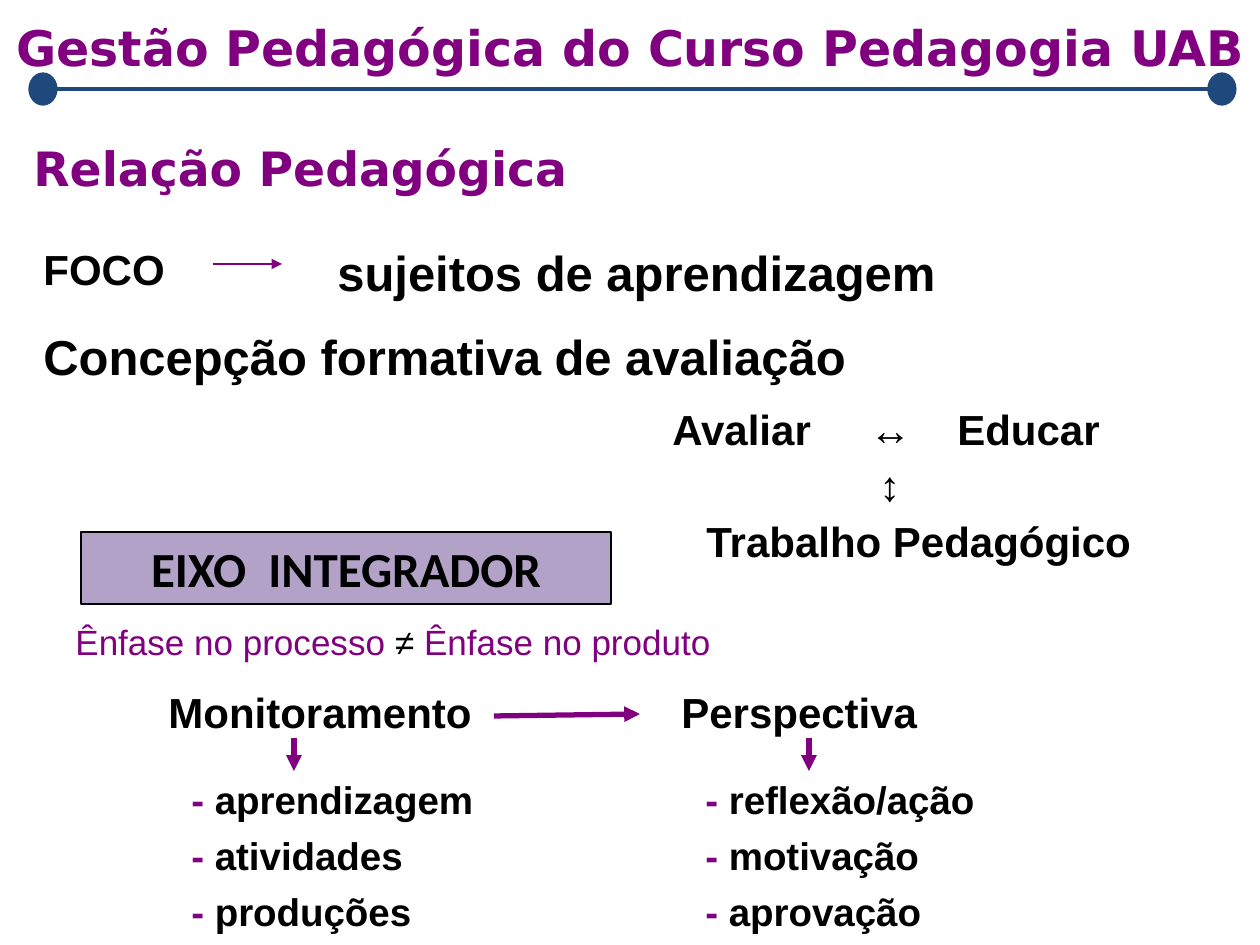
from lxml.etree import SubElement
from pptx import Presentation
from pptx.dml.color import RGBColor
from pptx.enum.shapes import MSO_CONNECTOR as CONN, MSO_SHAPE as SHAPE
from pptx.enum.text import MSO_ANCHOR as ANCHOR, PP_ALIGN as ALIGN
from pptx.oxml.ns import qn
from pptx.util import Emu, Pt

PX = 914400 // 126
PURPLE = RGBColor(0x80, 0x00, 0x80)
NAVY = RGBColor(0x1F, 0x49, 0x7D)
LILAC = RGBColor(0xB3, 0xA2, 0xC7)
BLACK = RGBColor(0x00, 0x00, 0x00)


def px(*values):
    """Turn pixel lengths into EMU."""
    return [Emu(v * PX) for v in values]


def add_run(p, text, size=24, color=BLACK, font="Arial", bold=True):
    """Add a formatted run to a paragraph."""
    r = p.add_run()
    r.text = text
    r.font.size, r.font.name, r.font.bold = Pt(size), font, bold
    r.font.color.rgb = color


def add_tabs(p, stops):
    """Set left tab stops on a paragraph."""
    tabs = SubElement(p._p.get_or_add_pPr(), qn("a:tabLst"))
    for stop in px(*stops):
        SubElement(tabs, qn("a:tab"), pos=str(stop), algn="l")


def write(tf, paragraphs, align=ALIGN.LEFT, before=0, tabs=(), **fmt):
    """Fill a frame with paragraphs, each a list of (text, format) runs."""
    tf.word_wrap = True
    for i, runs in enumerate(paragraphs):
        p = tf.paragraphs[0] if i == 0 else tf.add_paragraph()
        p.alignment = align
        if i:
            p.space_before = Pt(before)
        if tabs:
            add_tabs(p, tabs[i])
        for text, own in runs:
            add_run(p, text, **{**fmt, **own})


def add_text(s, box, paragraphs, anchor=ANCHOR.TOP, top=11, **fmt):
    """Add a text box."""
    tf = s.shapes.add_textbox(*px(*box)).text_frame
    tf.vertical_anchor = anchor
    tf.margin_top = px(top)[0]
    write(tf, paragraphs, **fmt)


def add_title(s, box, text, **fmt):
    """Add a purple heading centred vertically in its box."""
    add_text(s, box, [[(text, {})]], anchor=ANCHOR.MIDDLE, top=6,
             font="DejaVu Sans", color=PURPLE, **fmt)


def add_line(s, ends, color, width, arrow=True):
    """Add a straight line, with an arrowhead at its end if wanted."""
    c = s.shapes.add_connector(CONN.STRAIGHT, *px(*ends))
    c.line.color.rgb, c.line.width = color, Pt(width)
    if arrow:
        SubElement(c.line._get_or_add_ln(), qn("a:tailEnd"), type="triangle")
    SubElement(c._element.spPr, qn("a:effectLst"))


def add_shape(s, kind, box, fill, line):
    """Add a filled preset shape."""
    sp = s.shapes.add_shape(kind, *px(*box))
    sp.shadow.inherit = False
    sp.fill.solid()
    sp.fill.fore_color.rgb = fill
    sp.line.color.rgb, sp.line.width = line, Pt(0.75)
    return sp


def add_dash_list(s, left, items):
    """Add a list with purple dashes."""
    rows = [[("-", {"color": PURPLE}), (f" {item}", {})] for item in items]
    add_text(s, (left, 765, 451, 170), rows, size=22, before=5.5)


def main():
    """Build the slide."""
    prs = Presentation()
    prs.slide_width, prs.slide_height = px(1260, 945)
    s = prs.slides.add_slide(prs.slide_layouts[6])

    add_title(s, (0, 0, 1260, 94), "Gestão Pedagógica do Curso Pedagogia UAB",
              size=28, align=ALIGN.CENTER)
    add_line(s, (39, 89, 1222, 89), NAVY, 2.25, arrow=False)
    for left in (1208, 29):
        add_shape(s, SHAPE.OVAL, (left, 73, 28, 32), NAVY, NAVY)
    add_title(s, (21, 136, 1187, 63), "Relação Pedagógica", size=27)

    for box, text, size in (
        ((31, 233, 410, 63), "FOCO", 24),
        ((325, 231, 751, 72), "sujeitos de aprendizagem", 28),
        ((31, 315, 936, 72), "Concepção formativa de avaliação", 28),
    ):
        add_text(s, box, [[(text, {})]], size=size)

    add_text(s, (660, 393, 566, 174),
             [[("Avaliar\t↔\tEducar", {})], [("\t↕", {})],
              [("\tTrabalho Pedagógico", {})]],
             before=3, tabs=((197, 285), (207,), (34,)))
    soft = {"size": 20, "bold": False}
    purple = {**soft, "color": PURPLE}
    add_text(s, (63, 609, 966, 131),
             [[("Ênfase no processo ", purple), ("≠", soft),
               (" Ênfase no produto", purple)],
              [("\tMonitoramento\tPerspectiva", {})]],
             before=14, tabs=((), (93, 606)))

    add_dash_list(s, 179, ("aprendizagem", "atividades", "produções"))
    add_dash_list(s, 693, ("reflexão/ação", "motivação", "aprovação"))
    for ends, width in (
        ((294, 738, 294, 771), 3),
        ((494, 716, 640, 714), 3),
        ((809, 738, 809, 771), 3),
        ((213, 264, 282, 264), 1),
    ):
        add_line(s, ends, PURPLE, width)

    sp = add_shape(s, SHAPE.RECTANGLE, (81, 532, 530, 72), LILAC, BLACK)
    write(sp.text_frame, [[("EIXO  INTEGRADOR", {})]], align=ALIGN.CENTER,
          size=28, font="Calibri")
    prs.save("out.pptx")


if __name__ == "__main__":
    main()
